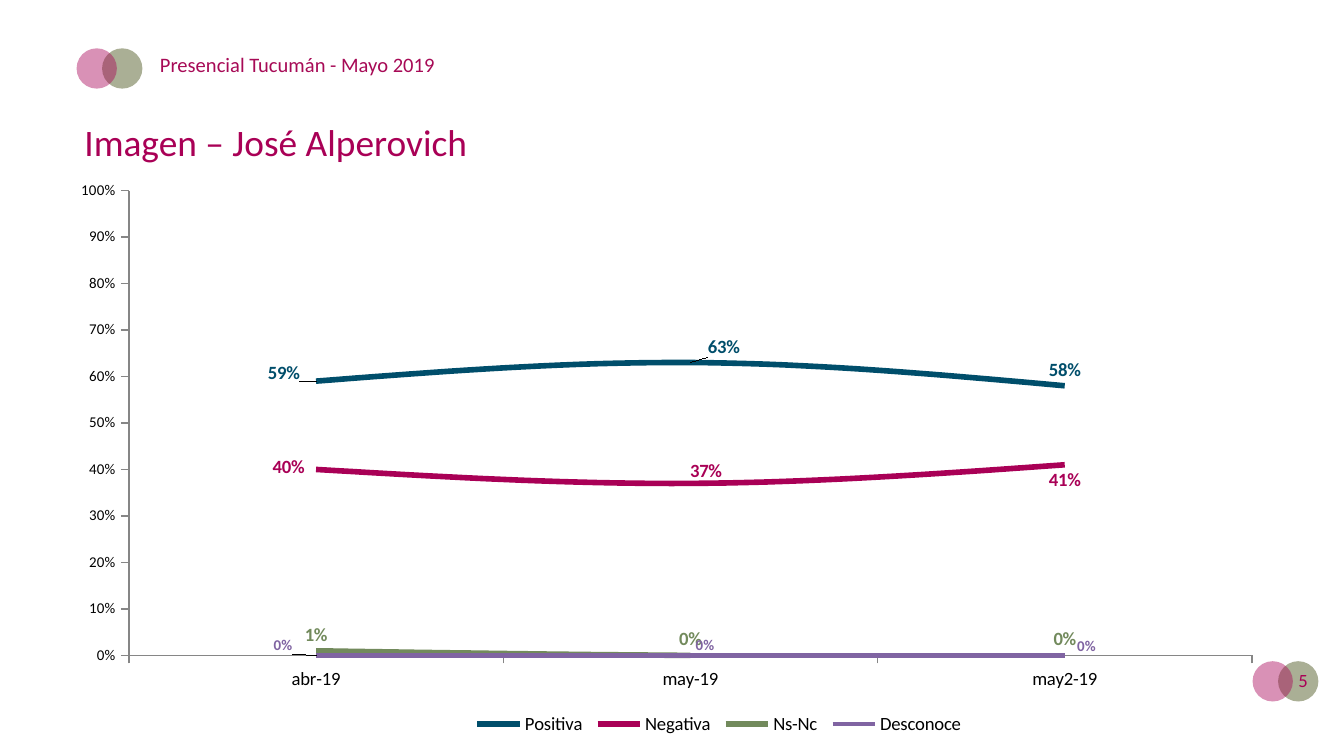
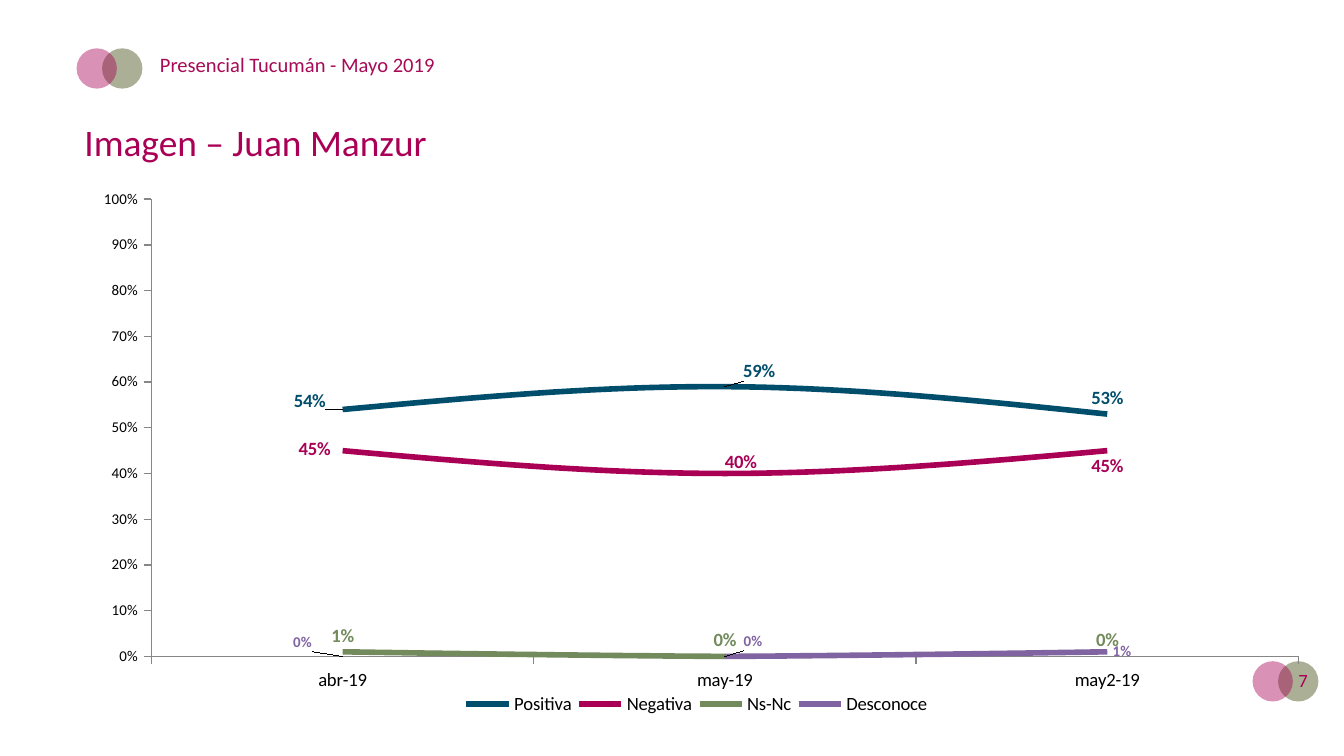
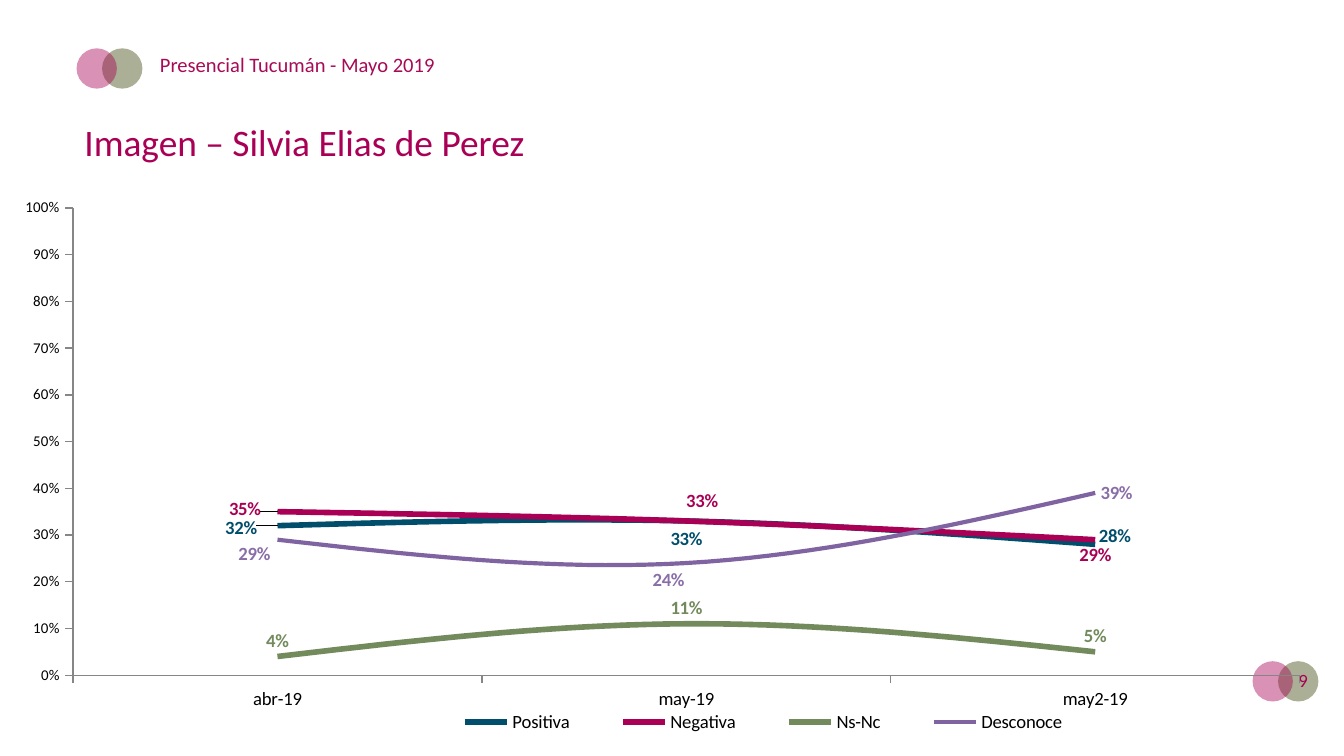
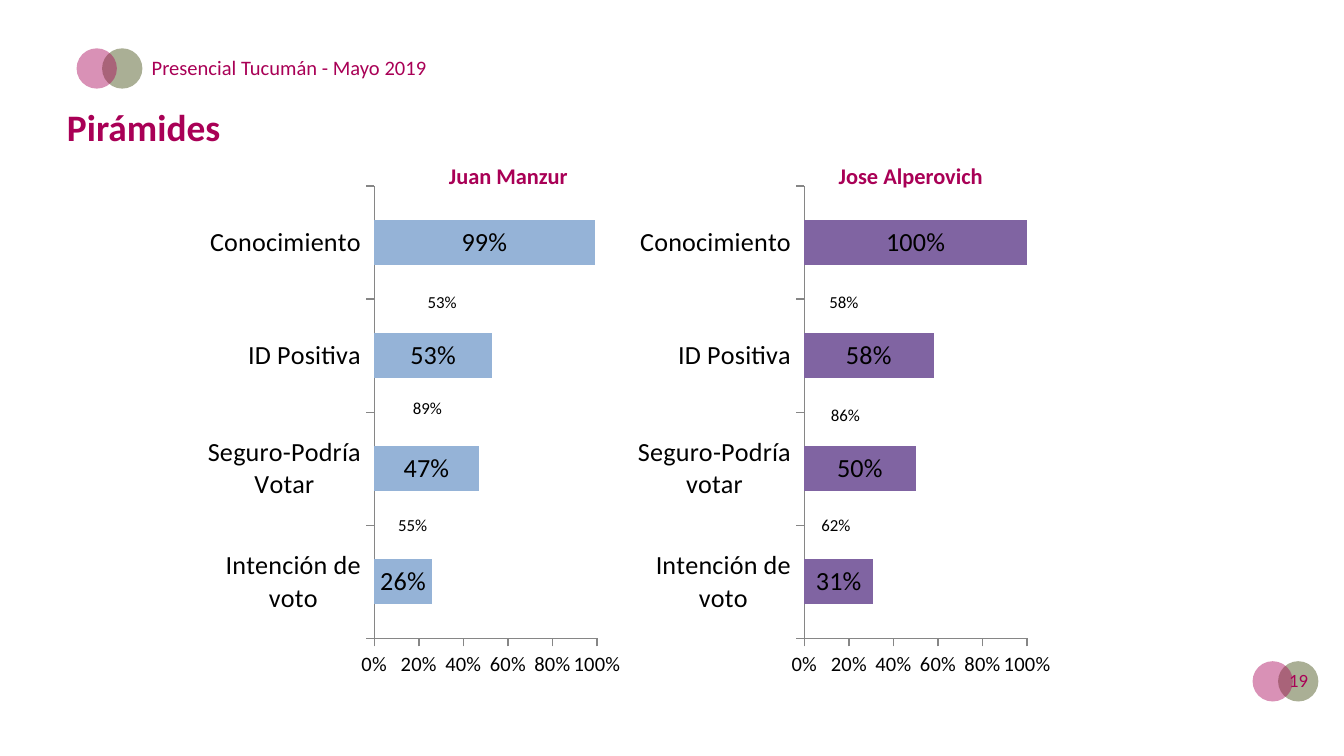
from dataclasses import dataclass, replace

from lxml import etree
from pptx import Presentation
from pptx.chart.data import CategoryChartData
from pptx.dml.color import RGBColor
from pptx.enum.chart import (
    XL_CHART_TYPE, XL_LABEL_POSITION, XL_LEGEND_POSITION, XL_TICK_MARK)
from pptx.enum.shapes import MSO_SHAPE
from pptx.enum.text import MSO_ANCHOR, PP_ALIGN
from pptx.oxml.ns import qn
from pptx.util import Inches, Pt

ELLIPSE = MSO_SHAPE.OVAL
LEFT, CENTER, RIGHT = PP_ALIGN.LEFT, PP_ALIGN.CENTER, PP_ALIGN.RIGHT
TOP, MIDDLE = MSO_ANCHOR.TOP, MSO_ANCHOR.MIDDLE
LINE, BAR = XL_CHART_TYPE.LINE, XL_CHART_TYPE.BAR_CLUSTERED
ABOVE, BELOW = XL_LABEL_POSITION.ABOVE, XL_LABEL_POSITION.BELOW
BESIDE, INSIDE = XL_LABEL_POSITION.RIGHT, XL_LABEL_POSITION.CENTER
LEGEND_BOTTOM = XL_LEGEND_POSITION.BOTTOM
TICK_OUT, TICK_NONE = XL_TICK_MARK.OUTSIDE, XL_TICK_MARK.NONE

COLUMNS, ROWS = 100, 56.25
CELL = Inches(10) // COLUMNS


@dataclass(frozen=True)
class Theme:
    font: str = "Calibri"
    magenta: str = "A90056"
    header: str = "A70A56"
    olive: str = "AAAF95"
    blue: str = "004E6B"
    green: str = "728A5C"
    purple: str = "8064A2"
    lilac: str = "896EA8"
    sky: str = "95B3D7"
    axis: str = "868686"
    ink: str = "000000"
    title_size: int = 20
    bar_size: int = 14
    caption_size: int = 12
    header_size: int = 11
    label_size: int = 10
    rate_size: int = 9
    axis_size: int = 8


THEME = Theme()


@dataclass(frozen=True)
class Box:
    left: float
    top: float
    width: float
    height: float

    def inside(self, left, top, width, height):
        return Box(self.left + left, self.top + top, width, height)

    def emu(self):
        return [round(side * CELL) for side in
                (self.left, self.top, self.width, self.height)]


@dataclass(frozen=True)
class Trend:
    name: str
    color: str
    position: object
    label_color: str
    label_size: int = THEME.label_size
    width: float = 3


TRENDS = [
    Trend("Positiva", THEME.blue, ABOVE, THEME.blue),
    Trend("Negativa", THEME.magenta, BELOW, THEME.magenta),
    Trend("Ns-Nc", THEME.green, ABOVE, THEME.green),
]
UNKNOWN = Trend("Desconoce", THEME.purple, BESIDE, THEME.purple,
                THEME.axis_size, 2.25)
MONTHS = ["abr-19", "may-19", "may2-19"]
STAGES = ["Intención de voto", "Seguro-Podría {}", "ID Positiva", "Conocimiento"]


def rgb(color):
    return RGBColor.from_string(color)


def style_font(font, size, color, bold=False):
    font.name = THEME.font
    font.size = Pt(size)
    font.bold = bold
    font.color.rgb = rgb(color)


def add_text(page, box, text, size, color, bold=False, align=LEFT,
             anchor=TOP, inset=(1, 0.5)):
    frame = page.shapes.add_textbox(*box.emu()).text_frame
    frame.word_wrap = True
    frame.vertical_anchor = anchor
    frame.margin_left = frame.margin_right = round(inset[0] * CELL)
    frame.margin_top = frame.margin_bottom = round(inset[1] * CELL)
    para = frame.paragraphs[0]
    para.text = text
    para.alignment = align
    style_font(para.font, size, color, bold)
    return para


def add_circle(page, box, color, alpha=None):
    circle = page.shapes.add_shape(ELLIPSE, *box.emu())
    circle.shadow.inherit = False
    circle.line.fill.background()
    circle.fill.solid()
    circle.fill.fore_color.rgb = rgb(color)
    if alpha:
        tint = circle._element.spPr.find(qn("a:solidFill"))[0]
        etree.SubElement(tint, qn("a:alpha")).set("val", str(alpha * 1000))


def add_emblem(page, box):
    size = box.height
    add_circle(page, box.inside(box.width - size, 0, size, size), THEME.olive)
    add_circle(page, box.inside(0, 0, size, size), THEME.magenta, 43)


def add_frame(page, number, header_box, header_color, header_inset):
    add_emblem(page, Box(5.7, 3.6, 4.9, 3))
    add_emblem(page, Box(93.2, 49.2, 4.9, 3))
    add_text(page, Box(91, 49.3, 7.3, 3), str(number), THEME.label_size,
             THEME.magenta, align=RIGHT)
    add_text(page, header_box, "Presencial Tucumán - Mayo 2019",
             THEME.header_size, header_color, inset=header_inset)


def set_layout(parent, index, percents, mode=None, inner=False):
    for old in parent.findall(qn("c:layout")):
        parent.remove(old)
    layout = etree.Element(qn("c:layout"))
    manual = etree.SubElement(layout, qn("c:manualLayout"))
    entries = [("layoutTarget", "inner")] if inner else []
    if mode:
        entries += [("xMode", mode), ("yMode", mode)]
    entries += [(key, f"{share / 100:.4f}") for key, share in zip("xywh", percents)]
    for key, value in entries:
        etree.SubElement(manual, qn("c:" + key)).set("val", value)
    parent.insert(index, layout)


def add_percent_chart(page, box, kind, categories, rows, plot, value_size,
                      category_size):
    content = CategoryChartData(number_format="0%")
    content.categories = categories
    for name, values in rows:
        content.add_series(name, [value / 100 for value in values])
    chart = page.shapes.add_chart(kind, *box.emu(), content).chart
    chart.has_title = False
    chart.has_legend = False
    style_font(chart.font, value_size, THEME.ink)
    chart.plots[0].vary_by_categories = False
    set_layout(chart._chartSpace.chart.plotArea, 0, plot, "edge", True)
    axes = (chart.category_axis, category_size), (chart.value_axis, value_size)
    for axis, size in axes:
        axis.has_major_gridlines = False
        axis.major_tick_mark = TICK_OUT
        axis.minor_tick_mark = TICK_NONE
        axis.format.line.color.rgb = rgb(THEME.axis)
        axis.format.line.width = Pt(0.75)
        style_font(axis.tick_labels.font, size, THEME.ink)
    scale = chart.value_axis
    scale.minimum_scale, scale.maximum_scale = 0, 1
    scale.tick_labels.number_format = "0%"
    scale.tick_labels.number_format_is_linked = False
    return chart


def label_series(series, position, size, color, bold=False):
    labels = series.data_labels
    labels.show_value = True
    labels.number_format = "0%"
    labels.number_format_is_linked = False
    labels.position = position
    style_font(labels.font, size, color, bold)
    return labels


def add_trend_chart(page, box, trends, values, shifts, plot, legend):
    rows = [(trend.name, row) for trend, row in zip(trends, values)]
    chart = add_percent_chart(page, box, LINE, MONTHS, rows, plot,
                              THEME.axis_size, THEME.label_size)
    chart.value_axis.major_unit = 0.1
    chart.has_legend = True
    chart.legend.position = LEGEND_BOTTOM
    chart.legend.include_in_layout = False
    style_font(chart.legend.font, THEME.label_size, THEME.ink)
    set_layout(chart.legend._element, 1, legend, "edge")
    for series, trend in zip(chart.plots[0].series, trends):
        series.smooth = True
        series.format.line.color.rgb = rgb(trend.color)
        series.format.line.width = Pt(trend.width)
        look = trend.label_size, trend.label_color, True
        labels = label_series(series, trend.position, *look)
        for index, shift in shifts.get(trend.name, {}).items():
            label = series.points[index].data_label
            style_font(label.font, *look)
            label.position = trend.position
            set_layout(labels._element.findall(qn("c:dLbl"))[-1], 1, shift)


def build_image_page(page, number, name, box, **chart):
    add_frame(page, number, Box(11.2, 3.5, 54.1, 4), THEME.header, (0.7, 0.4))
    add_text(page, Box(5.3, 8.3, 82.7, 4.4), "Imagen – " + name,
             THEME.title_size, THEME.magenta, anchor=MIDDLE)
    add_trend_chart(page, box, **chart)


def add_pyramid(page, box, name, name_left, verb, color, values, rates):
    stages = [stage.format(verb) for stage in STAGES]
    chart = add_percent_chart(page, box, BAR, stages, [("Series 1", values)],
                              (39.1, 0, 48.2, 82), THEME.header_size,
                              THEME.bar_size)
    chart.value_axis.major_unit = 0.2
    chart.plots[0].gap_width = 150
    series = chart.plots[0].series[0]
    series.format.fill.solid()
    series.format.fill.fore_color.rgb = rgb(color)
    label_series(series, INSIDE, THEME.bar_size, THEME.ink)
    caption = add_text(page, box.inside(name_left, -1.9, 13.6, 4.9), name,
                       THEME.caption_size, THEME.magenta, True, inset=(0.7, 0.4))
    caption.line_spacing = 0.9
    for left, top, rate in rates:
        add_text(page, box.inside(left, top, 10.6, 2.5), f"{rate}%",
                 THEME.rate_size, THEME.ink, align=CENTER)


def build_pyramid_page(page, number):
    add_frame(page, number, Box(10.3, 3.6, 54.1, 4), THEME.magenta, (1, 0.5))
    add_text(page, Box(4, 7, 76.8, 4.9), "Pirámides", THEME.title_size,
             THEME.magenta, True, anchor=MIDDLE)
    first = Box(14.4, 13.8, 34.4, 41.1)
    add_pyramid(page, first, "Juan Manzur", 18.3, "Votar", THEME.sky,
                [26, 47, 53, 99],
                [(13.2, 7.4, 53), (12.1, 15.3, 89), (11, 24, 55)])
    add_pyramid(page, replace(first, left=46.4), "Jose Alperovich", 15.3,
                "votar", THEME.purple, [31, 50, 58, 100],
                [(11.1, 7.4, 58), (11.2, 15.8, 86), (10.5, 24, 62)])


def main():
    deck = Presentation()
    deck.slide_width = round(COLUMNS * CELL)
    deck.slide_height = round(ROWS * CELL)
    blank = deck.slide_layouts[6]

    def new_page():
        return deck.slides.add_slide(blank)

    usual_shifts = {
        "Positiva": {0: (-2.7, 1.4), 1: (2.8, 0)},
        "Negativa": {0: (-2.3, -3.2), 1: (1.3, -4.9)},
    }
    build_image_page(
        new_page(), 5, "José Alperovich", Box(5.5, 13.5, 88.9, 42.1),
        trends=[*TRENDS, UNKNOWN],
        values=[(59, 63, 58), (40, 37, 41), (1, 0, 0), (0, 0, 0)],
        shifts={**usual_shifts,
                "Desconoce": {0: (-4, -1.8), 1: (0, -1.8), 2: (0.6, -1.5)}},
        plot=(4.6, 1.6, 94, 82.2), legend=(33, 93.2, 42, 5.5))
    build_image_page(
        new_page(), 7, "Juan Manzur", Box(6, 13.5, 90.8, 41.4),
        trends=[*TRENDS, replace(UNKNOWN, width=3)],
        values=[(54, 59, 53), (45, 40, 45), (1, 0, 0), (0, 0, 1)],
        shifts={**usual_shifts,
                "Desconoce": {0: (-4.5, -2.5), 1: (1.1, -2.7)}},
        plot=(5.8, 3.2, 94, 82.2), legend=(31, 91.2, 39, 5.5))
    build_image_page(
        new_page(), 9, "Silvia Elias de Perez", Box(0, 14, 97.1, 42.3),
        trends=[*TRENDS, replace(UNKNOWN, label_color=THEME.lilac,
                                 label_size=THEME.label_size)],
        values=[(32, 33, 28), (35, 33, 29), (4, 11, 5), (29, 24, 39)],
        shifts={"Positiva": {0: (-2.8, 3.3), 1: (0, 6), 2: (1.5, 1.4)},
                "Negativa": {0: (-2.5, -3.3), 1: (1.2, -6.2)},
                "Desconoce": {0: (-3.4, 2.5), 1: (-3, 3)}},
        plot=(5.6, 3.5, 94, 82.2), legend=(32, 91.2, 53, 5.5))
    build_pyramid_page(new_page(), 19)
    deck.save("out.pptx")


if __name__ == "__main__":
    main()
